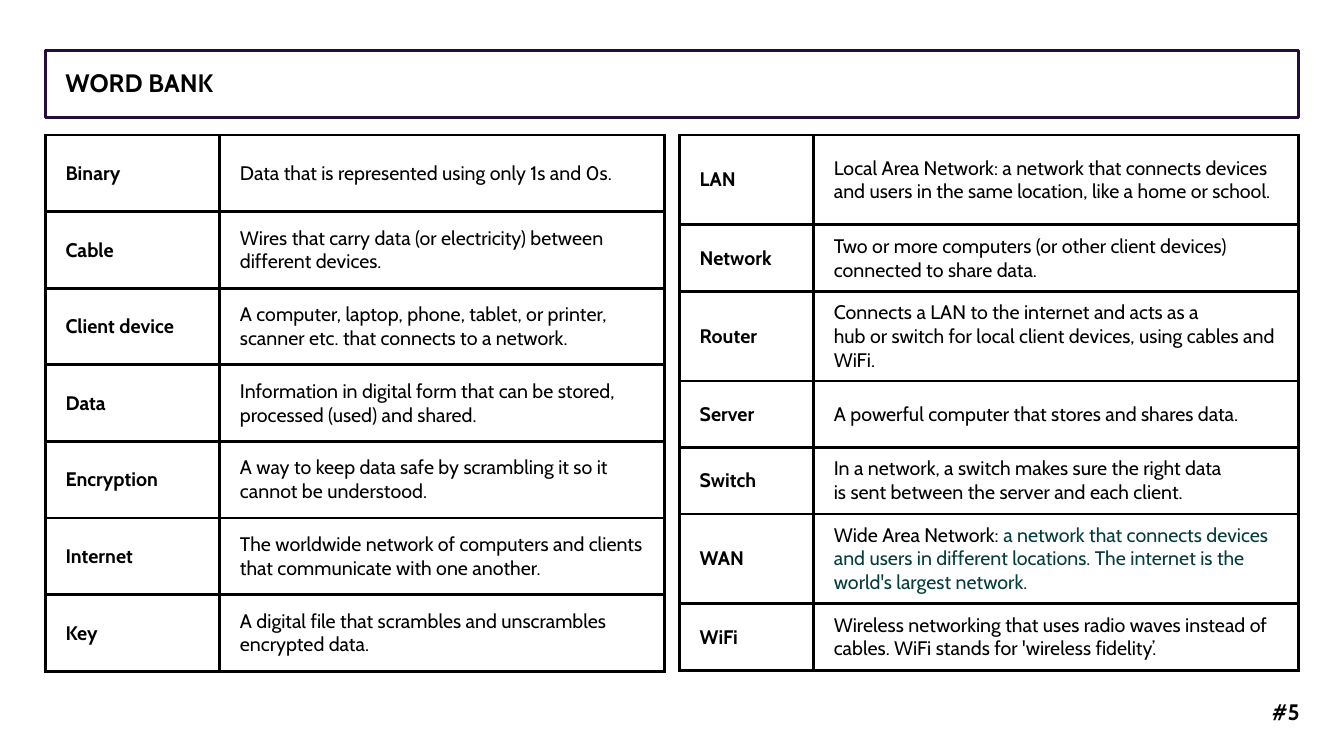
from dataclasses import dataclass

from lxml import etree
from pptx import Presentation, util as u
from pptx.dml.color import RGBColor
from pptx.enum import shapes, text
from pptx.oxml import ns

PX = 9144  # EMU; 100 px to the inch
FONT = "Cabin"
BLACK, WHITE, PURPLE, TEAL = "000000", "FFFFFF", "240C40", "053C3C"
BORDER = u.Pt(2.25)


@dataclass
class Entry:
    term: str
    meaning: str
    height: int
    accent: str = ""


@dataclass
class WordTable:
    left: int
    widths: tuple[int, int]
    entries: list[Entry]


LEFT_WORDS = WordTable(45, (173, 441), [
    Entry("Binary", "Data that is represented using only 1s and 0s.", 76),
    Entry("Cable", "Wires that carry data (or electricity) between different devices.", 76),
    Entry("Client device", "A computer, laptop, phone, tablet, or printer, scanner etc. "
          "that connects to a network.", 76),
    Entry("Data", "Information in digital form that can be stored, processed (used) and shared.", 76),
    Entry("Encryption", "A way to keep data safe by scrambling it so it cannot be understood.", 76),
    Entry("Internet", "The worldwide network of computers and clients that communicate "
          "with one another.", 76),
    Entry("Key", "A digital file that scrambles and unscrambles encrypted data.", 76),
])
RIGHT_WORDS = WordTable(674, (133, 481), [
    Entry("LAN", "Local Area Network: a network that connects devices and users "
          "in the same location, like a home or school.", 89),
    Entry("Network", "Two or more computers (or other client devices) connected to share data.", 66),
    Entry("Router", "Connects a LAN to the internet and acts as a\n"
          "hub or switch for local client devices, using cables and WiFi.", 89),
    Entry("Server", "A powerful computer that stores and shares data.", 66),
    Entry("Switch", "In a network, a switch makes sure the right data\n"
          "is sent between the server and each client.", 66),
    Entry("WAN", "Wide Area Network: ", 89,
          "a network that connects devices and users in different locations. "
          "The internet is the world's largest network."),
    Entry("WiFi", "Wireless networking that uses radio waves instead of cables. "
          "WiFi stands for 'wireless fidelity’.", 66),
])


def px(length: int) -> u.Emu:
    return u.Emu(length * PX)


def color(value: str) -> RGBColor:
    return RGBColor.from_string(value)


def write(para, words: str, size: int, bold: bool) -> None:
    para.text = words
    para.font.name = FONT
    para.font.size = u.Pt(size)
    para.font.bold = bold
    para.font.color.rgb = color(BLACK)


def set_insets(target, across: int, down: int) -> None:
    target.margin_left = target.margin_right = px(across)
    target.margin_top = target.margin_bottom = px(down)


def set_borders(cell) -> None:
    properties = cell._tc.get_or_add_tcPr()
    for side in ("lnL", "lnR", "lnT", "lnB"):
        line = etree.SubElement(properties, ns.qn(f"a:{side}"), w=str(BORDER))
        fill = etree.SubElement(line, ns.qn("a:solidFill"))
        etree.SubElement(fill, ns.qn("a:srgbClr"), val=BLACK)


def fill_cell(cell, words: str, bold: bool, accent: str = "") -> None:
    set_borders(cell)
    cell.fill.solid()
    cell.fill.fore_color.rgb = color(WHITE)
    set_insets(cell, 20, 8)
    cell.vertical_anchor = text.MSO_ANCHOR.MIDDLE
    para = cell.text_frame.paragraphs[0]
    write(para, words, 14, bold)
    if accent:
        span = para.add_run()
        span.text = accent
        span.font.color.rgb = color(TEAL)


def add_words(page, words: WordTable) -> None:
    height = sum(entry.height for entry in words.entries)
    frame = page.shapes.add_table(len(words.entries), 2, px(words.left), px(134),
                                  px(sum(words.widths)), px(height))
    table = frame.table
    table.first_row = table.horz_banding = False
    for column, width in zip(table.columns, words.widths):
        column.width = px(width)
    for row, entry in zip(table.rows, words.entries):
        row.height = px(entry.height)
        fill_cell(row.cells[0], entry.term, True)
        fill_cell(row.cells[1], entry.meaning, False, entry.accent)


def add_title(page) -> None:
    box = page.shapes.add_shape(shapes.MSO_SHAPE.RECTANGLE, px(45), px(50), px(1243), px(67))
    box.shadow.inherit = False
    box.fill.solid()
    box.fill.fore_color.rgb = color(WHITE)
    box.line.color.rgb = color(PURPLE)
    box.line.width = BORDER
    frame = box.text_frame
    frame.word_wrap = True
    frame.vertical_anchor = text.MSO_ANCHOR.MIDDLE
    set_insets(frame, 20, 20)
    para = frame.paragraphs[0]
    para.alignment = text.PP_ALIGN.LEFT
    para.line_spacing = 0.9
    write(para, "WORD BANK", 18, True)


def add_page_number(page) -> None:
    box = page.shapes.add_textbox(px(1201), px(687), px(88), px(37))
    frame = box.text_frame
    frame.word_wrap = True
    frame.vertical_anchor = text.MSO_ANCHOR.MIDDLE
    set_insets(frame, 0, 0)
    para = frame.paragraphs[0]
    para.alignment = text.PP_ALIGN.RIGHT
    write(para, "#5", 16, True)


def main() -> None:
    deck = Presentation()
    deck.slide_width, deck.slide_height = px(1333), px(750)
    page = deck.slides.add_slide(deck.slide_layouts[6])
    add_page_number(page)
    add_title(page)
    for words in (LEFT_WORDS, RIGHT_WORDS):
        add_words(page, words)
    deck.save("out.pptx")


if __name__ == "__main__":
    main()
